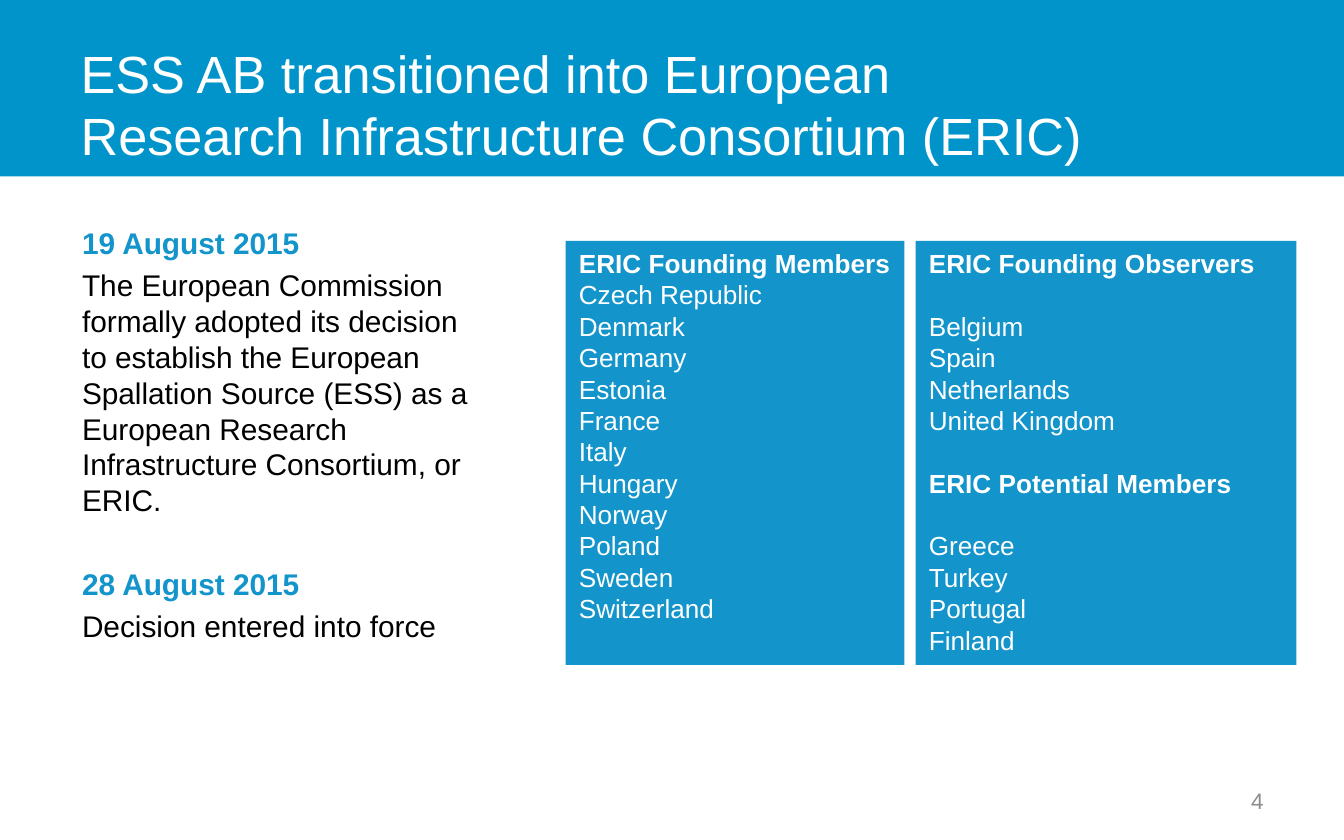
from pptx import Presentation
from pptx import util as u
from pptx.dml.color import RGBColor
from pptx.enum import shapes, text
from pptx.oxml.ns import qn

PX = 9525
FONT = "Arial"
WHITE, BLACK, GREY = "FFFFFF", "000000", "8C8C8C"
BANNER, ACCENT = "0094CA", "1394CA"

MEMBERS = ["Czech Republic", "Denmark", "Germany", "Estonia", "France", "Italy",
           "Hungary", "Norway", "Poland", "Sweden", "Switzerland"]
OBSERVERS = ["Belgium", "Spain", "Netherlands", "United Kingdom"]
POTENTIAL = ["Greece", "Turkey", "Portugal", "Finland"]
DECISION = ("The European Commission formally adopted its decision to establish "
            "the European Spallation Source (ESS) as a European Research "
            "Infrastructure Consortium, or ERIC.")


def px(*lengths):
    return [length * PX for length in lengths]


def colour(value):
    return RGBColor.from_string(value)


def place(box, left, top, width, height):
    box.left, box.top, box.width, box.height = px(left, top, width, height)


def set_frame(box, anchor):
    frame = box.text_frame
    frame.word_wrap = True
    frame.auto_size = text.MSO_AUTO_SIZE.NONE
    frame.vertical_anchor = anchor
    return frame


def write(para, words, size, fill, bold=False, before=0, align=text.PP_ALIGN.LEFT):
    para.alignment = align
    para.space_before = u.Pt(before)
    span = para.add_run()
    span.text = words
    span.font.name = FONT
    span.font.size = u.Pt(size)
    span.font.bold = bold
    span.font.color.rgb = colour(fill)


def next_para(frame):
    first = frame.paragraphs[0]
    return frame.add_paragraph() if first.runs else first


def remove_bullet(para):
    props = para._p.get_or_add_pPr()
    props.set("marL", "0")
    props.set("indent", "0")
    props.append(props.makeelement(qn("a:buNone"), {}))


def add_panel(page, left, top, width, height, fill):
    panel = page.shapes.add_shape(shapes.MSO_SHAPE.RECTANGLE,
                                  *px(left, top, width, height))
    panel.shadow.inherit = False
    panel.fill.solid()
    panel.fill.fore_color.rgb = colour(fill)
    panel.line.fill.background()
    return panel


def add_title(page, words):
    title = page.shapes.title
    place(title, 48, 24, 750, 100)
    frame = set_frame(title, text.MSO_ANCHOR.MIDDLE)
    write(frame.paragraphs[0], words, 28, WHITE)


def add_events(page, events):
    body = page.placeholders[1]
    place(body, 49, 156, 310, 378)
    frame = set_frame(body, text.MSO_ANCHOR.TOP)
    for index, (date, event) in enumerate(events):
        for words, fill, bold, before in ((date, ACCENT, True, 25.6 if index else 0),
                                          (event, BLACK, False, 3.2)):
            para = next_para(frame)
            remove_bullet(para)
            write(para, words, 16, fill, bold, before)


def add_country_panel(page, left, width, groups, gap=0):
    panel = add_panel(page, left, 172, width, 303, ACCENT)
    frame = set_frame(panel, text.MSO_ANCHOR.TOP)
    for index, (heading, countries) in enumerate(groups):
        write(next_para(frame), heading, 14, WHITE, True, gap if index else 0)
        for row, country in enumerate(countries):
            write(next_para(frame), country, 14, WHITE, before=0 if row else gap)


def add_page_number(page, number):
    box = page.shapes.add_textbox(*px(688, 556, 224, 32))
    frame = set_frame(box, text.MSO_ANCHOR.MIDDLE)
    write(frame.paragraphs[0], number, 12, GREY, align=text.PP_ALIGN.RIGHT)


def main():
    deck = Presentation()
    deck.slide_width, deck.slide_height = px(960, 600)
    page = deck.slides.add_slide(deck.slide_layouts[1])
    banner = add_panel(page, 0, 0, 960, 126, BANNER)
    page.shapes._spTree.insert(2, banner._element)
    add_title(page, "ESS AB transitioned into European Research "
                    "Infrastructure Consortium (ERIC)")
    add_events(page, [("19 August 2015", DECISION),
                      ("28 August 2015", "Decision entered into force")])
    add_page_number(page, "4")
    add_country_panel(page, 404, 242, [("ERIC Founding Members", MEMBERS)])
    add_country_panel(page, 654, 272, [("ERIC Founding Observers", OBSERVERS),
                                       ("ERIC Potential Members", POTENTIAL)], gap=16.8)
    deck.save("out.pptx")


if __name__ == "__main__":
    main()
